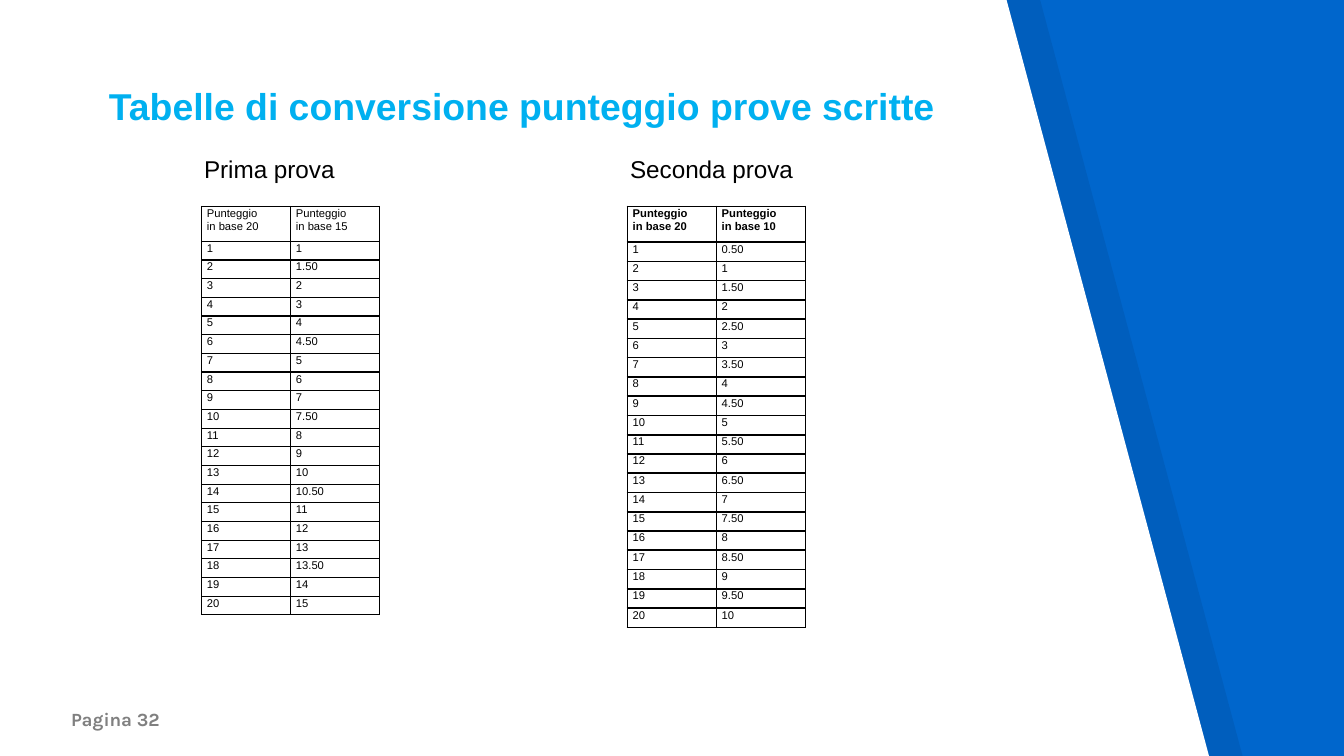
"""Slide with the conversion tables for the scores of the written exams."""
from dataclasses import dataclass

from lxml.etree import SubElement
from pptx import Presentation
from pptx.dml.color import RGBColor
from pptx.enum.text import MSO_ANCHOR as Anchor, PP_ALIGN as Align
from pptx.oxml.ns import qn
from pptx.slide import Slide
from pptx.table import _Cell as Cell
from pptx.text.text import _Paragraph as Paragraph
from pptx.util import Inches, Pt

COLUMNS, ROWS = 100, 56.25
UNIT = Inches(0.1)
BLACK, WHITE, BLUE, CYAN, GREY = "000000", "FFFFFF", "0066CC", "00B0F0", "808080"
MAX_SCORE = 20


@dataclass(frozen=True)
class Area:
    left: float
    top: float
    width: float
    height: float


@dataclass(frozen=True)
class Label:
    text: str
    area: Area
    size: float
    color: str
    font: str = "Arial"
    bold: bool = False
    align: Align = Align.LEFT
    anchor: Anchor = Anchor.TOP
    tabs: tuple[float, ...] = ()


@dataclass(frozen=True)
class Panel:
    shift: float
    color: str
    opacity: int


@dataclass(frozen=True)
class Conversion:
    base: int
    area: Area
    header_height: float
    border: float
    bold_header: bool


PANELS = (Panel(2.5, BLACK, 7), Panel(0, WHITE, 100))
LABELS = (
    Label("Pagina 32", Area(4.3, 50.7, 61.8, 4.5), 10, GREY, "Karla", True,
          anchor=Anchor.BOTTOM),
    Label("Tabelle di conversione punteggio prove scritte", Area(5.4, 5.2, 66.9, 6.8),
          20, CYAN, bold=True, align=Align.CENTER),
    Label("\tPrima prova\tSeconda prova", Area(7.2, 10.5, 68, 38.5), 13, BLACK,
          tabs=(7, 38.7)),
)
CONVERSIONS = (
    Conversion(15, Area(15, 15.36, 13.25, 30.45), 2.6, 0.75, False),
    Conversion(10, Area(46.68, 15.36, 13.25, 31.36), 2.66, 1, True),
)


def grid(units: float) -> int:
    """Turn grid units into a slide length."""
    return round(units * UNIT)


def place(area: Area) -> tuple[int, int, int, int]:
    """Return left, top, width and height of an area as slide lengths."""
    return grid(area.left), grid(area.top), grid(area.width), grid(area.height)


def paint(color_owner, color: str) -> None:
    """Give a fill a solid colour."""
    color_owner.solid()
    color_owner.fore_color.rgb = RGBColor.from_string(color)


def style(paragraph: Paragraph, size: float, color: str, font: str, bold: bool) -> None:
    """Format every run of a paragraph."""
    for run in paragraph.runs:
        run.font.size, run.font.name, run.font.bold = Pt(size), font, bold
        paint(run.font.fill, color)


def draw_panel(slide: Slide, panel: Panel) -> None:
    """Draw a full-height panel with a slanted right edge."""
    corners = [(0, -0.1), (0, 56.4), (90, 56.4), (74.9, 0)]
    points = [(grid(x + panel.shift), grid(y)) for x, y in corners]
    builder = slide.shapes.build_freeform(*points[0])
    builder.add_line_segments(points[1:], close=True)
    outline = builder.convert_to_shape()
    outline.shadow.inherit = False
    outline.line.fill.background()
    paint(outline.fill, panel.color)
    if panel.opacity < 100:
        tint = outline.fill._xPr.find(".//" + qn("a:srgbClr"))
        SubElement(tint, qn("a:alpha"), val=str(panel.opacity * 1000))


def draw_label(slide: Slide, label: Label) -> None:
    """Draw a text box with one paragraph."""
    frame = slide.shapes.add_textbox(*place(label.area)).text_frame
    frame.word_wrap, frame.vertical_anchor = True, label.anchor
    frame.margin_left = frame.margin_right = UNIT
    frame.margin_top = frame.margin_bottom = UNIT
    frame.text = label.text
    paragraph = frame.paragraphs[0]
    paragraph.alignment = label.align
    if label.tabs:
        stops = SubElement(paragraph._p.get_or_add_pPr(), qn("a:tabLst"))
        for stop in label.tabs:
            SubElement(stops, qn("a:tab"), pos=str(grid(stop)), algn="l")
    style(paragraph, label.size, label.color, label.font, label.bold)


def converted(score: int, base: int) -> str:
    """Convert a score, keeping halves and rounding quarters."""
    value = score * base / MAX_SCORE
    return f"{value:.2f}" if value % 1 == 0.5 else f"{value:.0f}"


def fill_cell(cell: Cell, text: str, border: float, bold: bool) -> None:
    """Write a bordered cell without background."""
    properties = cell._tc.get_or_add_tcPr()
    for side in ("lnL", "lnR", "lnT", "lnB"):
        edge = SubElement(properties, qn(f"a:{side}"), w=str(Pt(border)))
        SubElement(SubElement(edge, qn("a:solidFill")), qn("a:srgbClr"), val=BLACK)
    cell.fill.background()
    cell.margin_left = cell.margin_right = grid(0.4)
    cell.margin_top = cell.margin_bottom = 0
    cell.text_frame.text = text
    for paragraph in cell.text_frame.paragraphs:
        paragraph.line_spacing = 1.07
        style(paragraph, 6, BLACK, "Arial", bold)


def draw_conversion(slide: Slide, conversion: Conversion) -> None:
    """Draw the table that converts scores to another base."""
    header = tuple(f"Punteggio\nin base {base}" for base in (MAX_SCORE, conversion.base))
    scores = [(str(score), converted(score, conversion.base))
              for score in range(1, MAX_SCORE + 1)]
    lines = [header, *scores]
    table = slide.shapes.add_table(len(lines), len(header), *place(conversion.area)).table
    table.first_row = table.horz_banding = False
    score_height = (conversion.area.height - conversion.header_height) / MAX_SCORE
    for index, line in enumerate(lines):
        is_header = index == 0
        table.rows[index].height = grid(conversion.header_height if is_header else score_height)
        for column, text in enumerate(line):
            fill_cell(table.cell(index, column), text, conversion.border,
                      is_header and conversion.bold_header)


def main() -> None:
    """Build and save the slide."""
    deck = Presentation()
    deck.slide_width, deck.slide_height = grid(COLUMNS), grid(ROWS)
    slide = deck.slides.add_slide(deck.slide_layouts[6])
    paint(slide.background.fill, BLUE)
    for panel in PANELS:
        draw_panel(slide, panel)
    for label in LABELS:
        draw_label(slide, label)
    for conversion in CONVERSIONS:
        draw_conversion(slide, conversion)
    deck.save("out.pptx")


if __name__ == "__main__":
    main()
